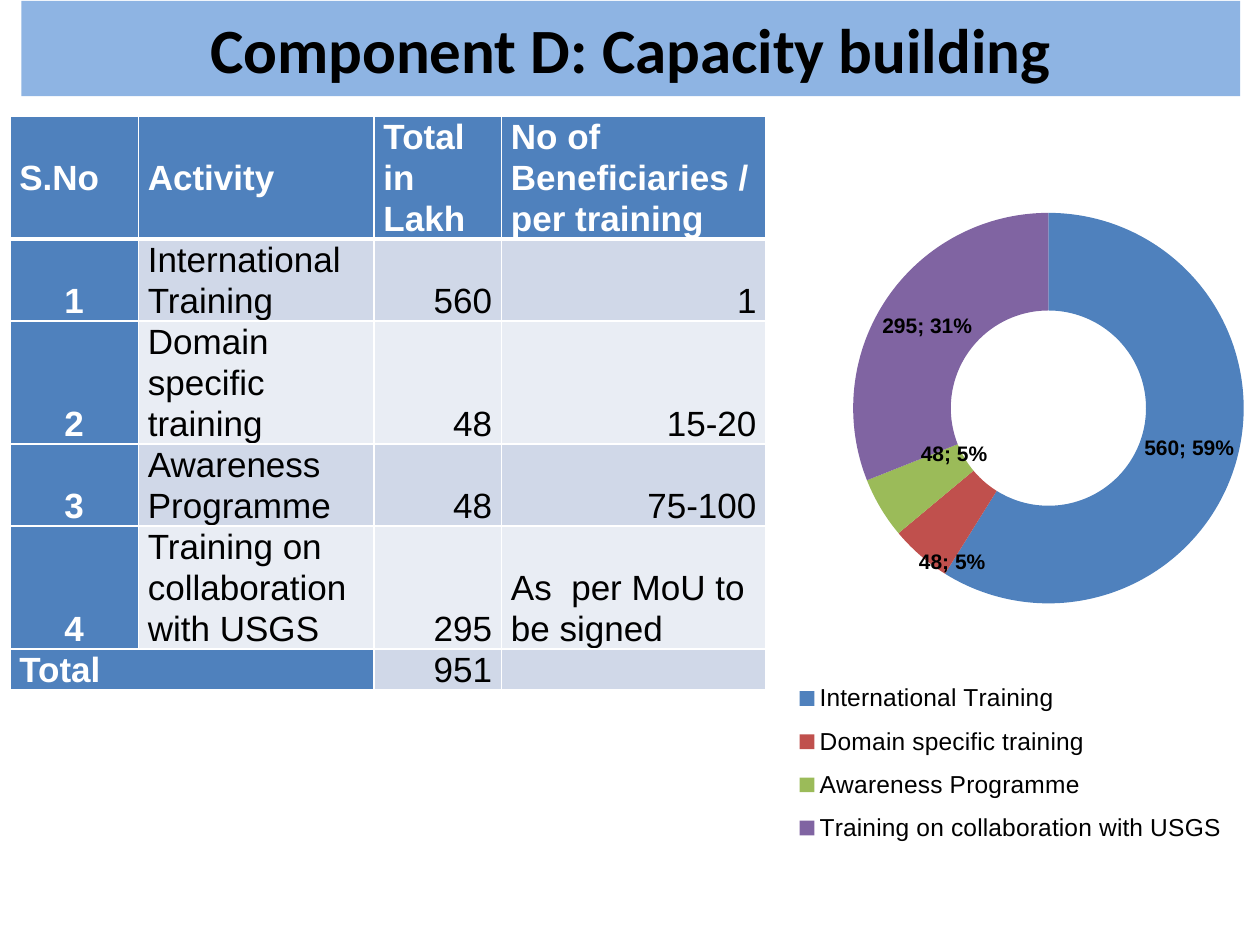
from lxml import etree
from pptx import Presentation
from pptx.chart.data import CategoryChartData
from pptx.dml.color import RGBColor
from pptx.enum.chart import XL_CHART_TYPE, XL_LEGEND_POSITION
from pptx.enum.shapes import MSO_SHAPE
from pptx.enum.text import MSO_ANCHOR, PP_ALIGN
from pptx.oxml import parse_xml
from pptx.oxml.ns import nsdecls, qn
from pptx.util import Cm, Pt

RECT = MSO_SHAPE.RECTANGLE
RING = XL_CHART_TYPE.DOUGHNUT
BELOW = XL_LEGEND_POSITION.BOTTOM
MIDDLE, BOTTOM = MSO_ANCHOR.MIDDLE, MSO_ANCHOR.BOTTOM
LEFT, CENTER = PP_ALIGN.LEFT, PP_ALIGN.CENTER
RIGHT, JUSTIFY = PP_ALIGN.RIGHT, PP_ALIGN.JUSTIFY

BLACK = RGBColor(0x00, 0x00, 0x00)
WHITE = RGBColor(0xFF, 0xFF, 0xFF)
SKY = RGBColor(0x8E, 0xB4, 0xE3)
BLUE = RGBColor(0x4F, 0x81, 0xBD)
RED = RGBColor(0xC0, 0x50, 0x4D)
GREEN = RGBColor(0x9B, 0xBB, 0x59)
PURPLE = RGBColor(0x80, 0x64, 0xA2)
BANDS = [RGBColor(0xE9, 0xED, 0xF4), RGBColor(0xD0, 0xD8, 0xE8)]


def set_font(font, name, size, color, bold=False):
    font.name, font.size, font.bold = name, Pt(size), bold
    font.color.rgb = color


def make_layout(inner="", **places):
    """Manual chart layout in shares of the chart's size."""
    parts = "".join(f'<c:{key} val="{val}"/>' for key, val in places.items())
    return parse_xml(f'<c:layout {nsdecls("c")}><c:manualLayout>{inner}{parts}'
                     '</c:manualLayout></c:layout>')


prs = Presentation()
prs.slide_width, prs.slide_height = Cm(25.4), Cm(19.05)
slide = prs.slides.add_slide(prs.slide_layouts[6])

# Title band
title = slide.shapes.add_shape(RECT, Cm(0.43), Cm(0.02), Cm(24.57), Cm(1.92))
title.shadow.inherit = False
title.fill.solid()
title.fill.fore_color.rgb = SKY
title.line.fill.background()
frame = title.text_frame
frame.text = "Component D: Capacity building"
frame.vertical_anchor = MIDDLE
frame.paragraphs[0].alignment = CENTER
set_font(frame.paragraphs[0].runs[0].font, "Calibri", 36, BLACK, True)

# Training table
rows = [
    ["S.No", "Activity", "Total in Lakh", "No of Beneficiaries /per training"],
    ["1", "International Training", "560", "1"],
    ["2", "Domain specific training", "48", "15-20"],
    ["3", "Awareness Programme", "48", "75-100"],
    ["4", "Training on collaboration with USGS", "295",
     "As  per MoU to be signed"],
    ["Total", "", "951", ""],
]
last = len(rows) - 1
holder = slide.shapes.add_table(len(rows), 4, Cm(0.2), Cm(2.34),
                                Cm(15.24), Cm(12.45))
table = holder.table
table.horz_banding = False
for col, width in zip(table.columns, [2.59, 4.75, 2.57, 5.33]):
    col.width = Cm(width)
for row, height in zip(table.rows, [2.11, 0.53, 0.84, 0.53, 1.07, 0.53]):
    row.height = Cm(height)
holder.height = Cm(12.45)

for r, texts in enumerate(rows):
    for c, text in enumerate(texts):
        cell = table.cell(r, c)
        head = r == 0 or c == 0 or (r == last and c == 1)
        # Borders, thicker under the header row
        props = cell._tc.get_or_add_tcPr()
        for side in "LRTB":
            thick = (r, side) in [(0, "B"), (1, "T")]
            line = etree.SubElement(props, qn(f"a:ln{side}"),
                                    w=str(Pt(3 if thick else 1)))
            solid = etree.SubElement(line, qn("a:solidFill"))
            etree.SubElement(solid, qn("a:srgbClr"), val=str(WHITE))
        cell.fill.solid()
        cell.fill.fore_color.rgb = BLUE if head else BANDS[r % 2]
        cell.margin_left = cell.margin_right = Cm(0.19)
        cell.margin_top = cell.margin_bottom = 0
        cell.vertical_anchor = (
            MIDDLE if r == 0 or (c == 1 and r < 3) else BOTTOM)
        # Text
        cell.text_frame.text = text
        para = cell.text_frame.paragraphs[0]
        para.line_spacing = 1.05
        if r == 0 or (r, c) in [(last, 0), (4, 3)]:
            para.alignment = LEFT
        elif c == 1:
            para.alignment = JUSTIFY if r < 3 else LEFT
        else:
            para.alignment = CENTER if c == 0 else RIGHT
        for run in para.runs:
            set_font(run.font, "Arial", 20, WHITE if head else BLACK, head)
table.cell(last, 0).merge(table.cell(last, 1))

# Doughnut chart of the totals
data = CategoryChartData(number_format="0")
data.categories = ["International Training ", "Domain specific training",
                   "Awareness Programme", "Training on collaboration with USGS"]
data.add_series("Series 1", [560, 48, 48, 295])
chart = slide.shapes.add_chart(RING, Cm(15.04), Cm(2.97), Cm(12.7),
                               Cm(14.61), data).chart
chart.has_title = False
set_font(chart.font, "Calibri", 10, BLACK)
plot = chart.plots[0]
plot.vary_by_categories = True
series = plot.series[0]
for i, color in enumerate([BLUE, RED, GREEN, PURPLE]):
    fill = series.points[i].format.fill
    fill.solid()
    fill.fore_color.rgb = color

area = chart._chartSpace.chart.plotArea
for old in area.findall(qn("c:layout")):
    area.remove(old)
area.insert(0, make_layout('<c:layoutTarget val="inner"/>', xMode="edge",
                           yMode="edge", x=0.17, y=0.02, w=0.62, h=0.68))
area.find(".//" + qn("c:holeSize")).set("val", "50")

# Value and percent labels, two of them moved off their slices
labels = series.data_labels
set_font(labels.font, "Arial", 12, BLACK, True)
labels.number_format, labels.number_format_is_linked = "0", True
labels.show_value = labels.show_percentage = True
labels.show_category_name = labels.show_series_name = False
group = labels._element
mark = parse_xml(f'<c:separator {nsdecls("c")}>; </c:separator>')
flags = [n for n in group if n.tag.startswith(qn("c:show"))
         and n.tag != qn("c:showLeaderLines")]
flags[-1].addnext(mark)
for i, (dx, dy) in enumerate([(0, 0.06), (0.05, -0.04)], 1):
    label = parse_xml(
        f'<c:dLbl {nsdecls("c")}><c:idx val="{i}"/><c:showLegendKey val="0"/>'
        '<c:showVal val="1"/><c:showCatName val="0"/><c:showSerName val="0"/>'
        '<c:showPercent val="1"/><c:showBubbleSize val="0"/>'
        '<c:separator>; </c:separator></c:dLbl>')
    label.insert(1, make_layout(x=dx, y=dy))
    group.insert(i - 1, label)

# Legend
chart.has_legend = True
legend = chart.legend
legend.position = BELOW
legend.include_in_layout = False
set_font(legend.font, "Arial", 14, BLACK)
box = legend._element
for old in box.findall(qn("c:layout")):
    box.remove(old)
box.find(qn("c:legendPos")).addnext(make_layout(
    xMode="edge", yMode="edge", x=0.06, y=0.72, w=0.72, h=0.26))

prs.save("out.pptx")
